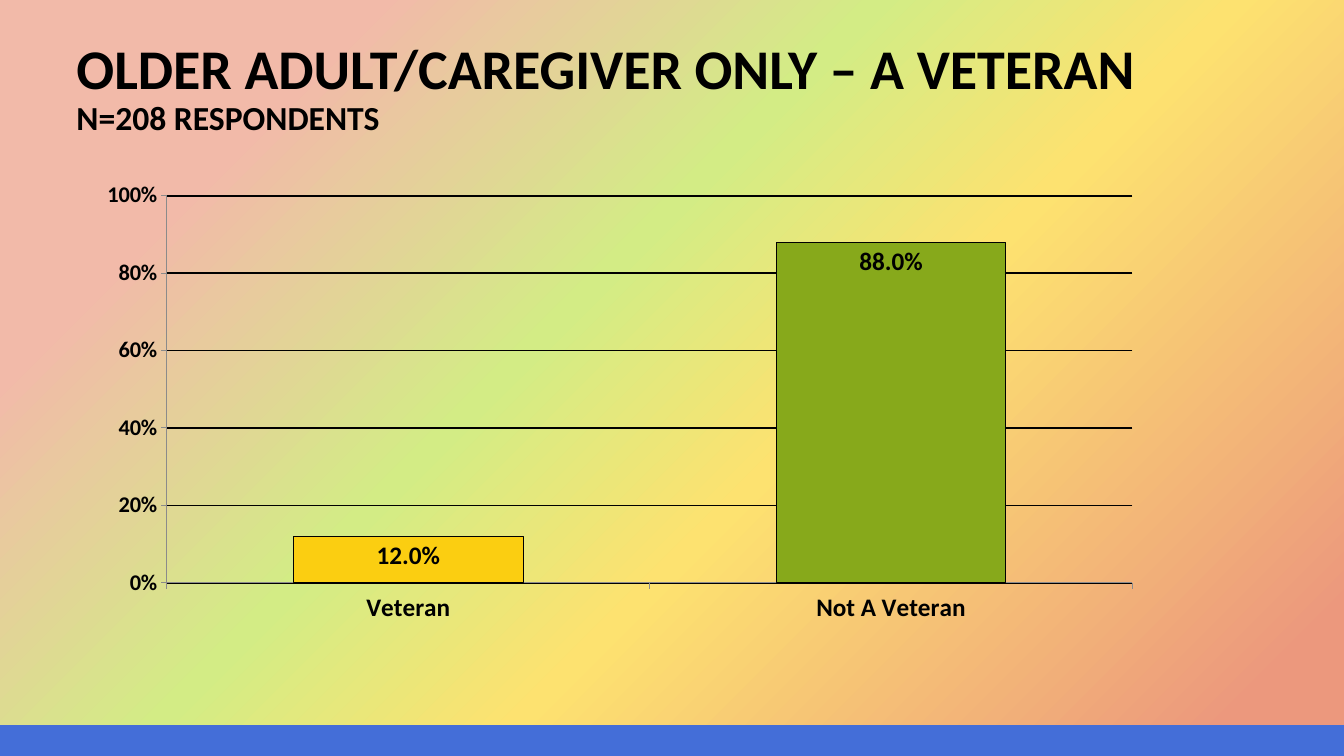
from dataclasses import dataclass

from lxml.etree import SubElement
from pptx import Presentation
from pptx.chart.chart import Chart
from pptx.chart.data import CategoryChartData
from pptx.dml.color import RGBColor
from pptx.dml.line import LineFormat
from pptx.enum.chart import XL_CHART_TYPE, XL_LABEL_POSITION, XL_TICK_MARK
from pptx.enum.shapes import MSO_SHAPE
from pptx.enum.text import MSO_ANCHOR
from pptx.oxml.ns import qn
from pptx.slide import Slide
from pptx.text.text import Font, _Paragraph
from pptx.util import Inches, Pt


@dataclass(frozen=True)
class Theme:
    font: str = "Calibri"
    ink: str = "000000"
    axis: str = "8B8B8B"
    footer: str = "446ED8"
    title_size: float = 40
    subtitle_size: float = 24
    category_size: float = 18
    scale_size: float = 16
    backdrop: tuple[tuple[int, str], ...] = (
        (18, "F2BAA9"), (42, "D3EC85"), (59, "FDE270"), (93, "EC987D"))


@dataclass(frozen=True)
class Answer:
    label: str
    share: float
    color: str


THEME = Theme()
ANSWERS = (
    Answer("Veteran", 0.12, "FBCE11"),
    Answer("Not A Veteran", 0.88, "87A91B"),
)
PLOT_AREA = {"x": 0.083, "y": 0.043, "w": 0.798, "h": 0.746}


def style_font(font: Font, size: float, color: str = THEME.ink, bold: bool = True) -> None:
    font.name = THEME.font
    font.size = Pt(size)
    font.bold = bold
    font.color.rgb = RGBColor.from_string(color)


def style_line(line: LineFormat, color: str, width: float) -> None:
    line.color.rgb = RGBColor.from_string(color)
    line.width = Pt(width)


def add_text(paragraph: _Paragraph, text: str, **style) -> None:
    run = paragraph.add_run()
    run.text = text
    style_font(run.font, **style)


def paint_backdrop(slide: Slide) -> None:
    slide.background.fill.gradient()
    gradient = slide.element.find(".//" + qn("a:gradFill"))
    for child in list(gradient):
        gradient.remove(child)
    stops = SubElement(gradient, qn("a:gsLst"))
    for percent, color in THEME.backdrop:
        stop = SubElement(stops, qn("a:gs"), pos=str(percent * 1000))
        SubElement(stop, qn("a:srgbClr"), val=color)
    SubElement(gradient, qn("a:lin"), ang=str(45 * 60000), scaled="0")


def add_footer(slide: Slide) -> None:
    footer = slide.shapes.add_shape(
        MSO_SHAPE.RECTANGLE, Inches(0), Inches(7.2), Inches(13.33), Inches(0.3))
    footer.shadow.inherit = False
    footer.fill.solid()
    footer.fill.fore_color.rgb = RGBColor.from_string(THEME.footer)
    style_line(footer.line, THEME.footer, 1)


def add_title(slide: Slide, title: str, subtitle: str) -> None:
    heading = slide.shapes.add_textbox(
        Inches(0.66), Inches(0.17), Inches(11.85), Inches(1.25)).text_frame
    heading.word_wrap = True
    heading.vertical_anchor = MSO_ANCHOR.BOTTOM
    paragraph = heading.paragraphs[0]
    paragraph.line_spacing = 0.9
    add_text(paragraph, title, size=THEME.title_size)
    paragraph.add_line_break()
    add_text(paragraph, subtitle, size=THEME.subtitle_size)


def place_plot(chart: Chart) -> None:
    plot_area = chart.element.find(".//" + qn("c:plotArea"))
    layout = plot_area.find(qn("c:layout"))
    if layout is None:
        layout = SubElement(plot_area, qn("c:layout"))
        plot_area.insert(0, layout)
    manual = SubElement(layout, qn("c:manualLayout"))
    SubElement(manual, qn("c:layoutTarget"), val="inner")
    for side in "xy":
        SubElement(manual, qn(f"c:{side}Mode"), val="edge")
    for side, fraction in PLOT_AREA.items():
        SubElement(manual, qn(f"c:{side}"), val=str(fraction))


def style_axes(chart: Chart) -> None:
    shares = chart.value_axis
    shares.minimum_scale, shares.maximum_scale, shares.major_unit = 0, 1, 0.2
    shares.tick_labels.number_format = "0%"
    shares.tick_labels.number_format_is_linked = False
    shares.has_major_gridlines = True
    style_line(shares.major_gridlines.format.line, THEME.ink, 1.25)
    sizes = ((chart.category_axis, THEME.category_size), (shares, THEME.scale_size))
    for axis, size in sizes:
        axis.major_tick_mark = XL_TICK_MARK.OUTSIDE
        style_line(axis.format.line, THEME.axis, 0.75)
        style_font(axis.tick_labels.font, size)


def add_answer_chart(slide: Slide) -> None:
    survey = CategoryChartData(number_format="0.0%")
    survey.categories = [answer.label for answer in ANSWERS]
    survey.add_series("Series 1", [answer.share for answer in ANSWERS])
    chart = slide.shapes.add_chart(
        XL_CHART_TYPE.COLUMN_CLUSTERED,
        Inches(0.66), Inches(1.72), Inches(12), Inches(5.15), survey).chart
    chart.has_legend = False
    chart.has_title = False
    style_font(chart.font, THEME.category_size, bold=False)
    place_plot(chart)
    style_axes(chart)

    columns = chart.plots[0]
    columns.gap_width = 110
    columns.vary_by_categories = False
    series = columns.series[0]
    for index, answer in enumerate(ANSWERS):
        column = series.points[index].format
        column.fill.solid()
        column.fill.fore_color.rgb = RGBColor.from_string(answer.color)
        style_line(column.line, THEME.ink, 0.75)

    labels = series.data_labels
    labels.show_value = True
    labels.position = XL_LABEL_POSITION.INSIDE_END
    labels.number_format = "0.0%"
    labels.number_format_is_linked = False
    style_font(labels.font, THEME.category_size)


def main() -> None:
    presentation = Presentation()
    presentation.slide_width = Inches(13.33)
    presentation.slide_height = Inches(7.5)
    slide = presentation.slides.add_slide(presentation.slide_layouts[6])
    paint_backdrop(slide)
    add_footer(slide)
    add_title(slide, "OLDER ADULT/CAREGIVER ONLY – A VETERAN", "N=208 RESPONDENTS")
    add_answer_chart(slide)
    presentation.save("out.pptx")


if __name__ == "__main__":
    main()
